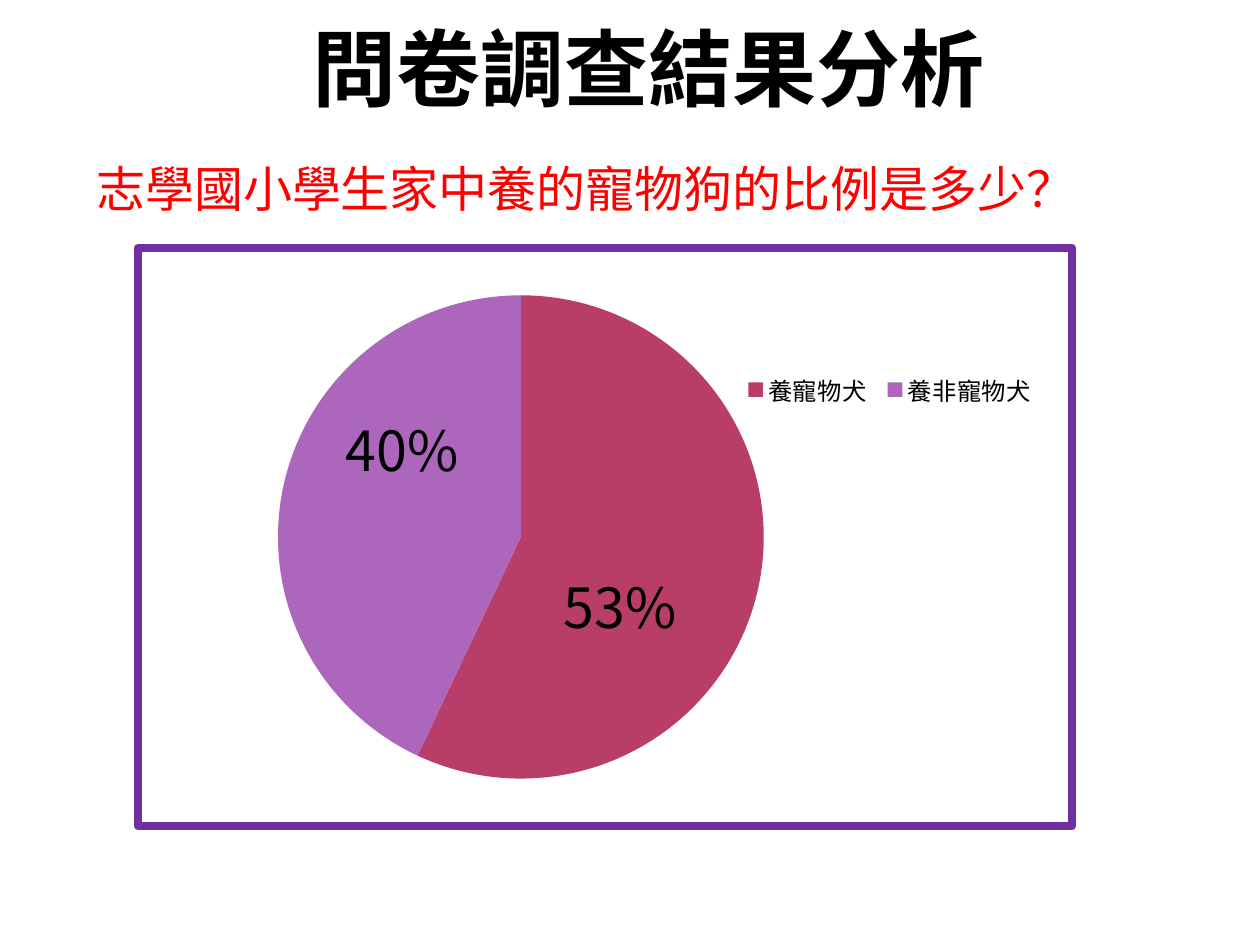
from dataclasses import dataclass

from lxml import etree
from pptx import Presentation
from pptx.chart.data import CategoryChartData
from pptx.dml.color import RGBColor
from pptx.enum.chart import XL_CHART_TYPE, XL_LABEL_POSITION, XL_LEGEND_POSITION
from pptx.enum.text import MSO_ANCHOR, PP_ALIGN
from pptx.oxml import parse_xml
from pptx.oxml.ns import nsdecls, qn
from pptx.util import Emu, Pt

PIE = XL_CHART_TYPE.PIE
CENTER_LABEL = XL_LABEL_POSITION.CENTER
LEGEND_RIGHT = XL_LEGEND_POSITION.RIGHT
TOP, BOTTOM = MSO_ANCHOR.TOP, MSO_ANCHOR.BOTTOM
LEFT, CENTER = PP_ALIGN.LEFT, PP_ALIGN.CENTER
PX_PER_INCH = 126


@dataclass(frozen=True)
class Theme:
    """Colours, fonts and type sizes of the slide."""
    ink: str = "000000"
    question: str = "FF0000"
    frame: str = "7030A0"
    slices: tuple = ("B83D68", "AC66BB")
    text_font: str = "Noto Sans CJK SC"
    chart_font: str = "Noto Sans CJK TC"
    title_size: int = 48
    question_size: int = 28
    chart_size: int = 10
    label_size: int = 32
    legend_size: int = 14
    frame_width: float = 4.5


THEME = Theme()


def px(length):
    """Turn pixels into EMU."""
    return Emu(round(length * 914400 / PX_PER_INCH))


def style_font(font, size, color, face):
    """Set size, colour and typeface of a font."""
    font.size = Pt(size)
    font.color.rgb = RGBColor.from_string(color)
    font.name = face


def add_text(slide, box, text, size, color, bold=False, anchor=TOP, align=LEFT, spacing=1.0):
    """Add a one-paragraph text box."""
    frame = slide.shapes.add_textbox(*map(px, box)).text_frame
    frame.word_wrap = True
    frame.vertical_anchor = anchor
    paragraph = frame.paragraphs[0]
    paragraph.text = text
    paragraph.alignment = align
    paragraph.line_spacing = spacing
    style_font(paragraph.font, size, color, THEME.text_font)
    paragraph.font.bold = bold
    defaults = paragraph._p.get_or_add_pPr().find(qn("a:defRPr"))
    etree.SubElement(defaults, qn("a:ea"), typeface=THEME.text_font)


def manual_layout(inner=False, edge=False, **fractions):
    """Build a chart layout element from fractions of the chart area."""
    layout = parse_xml(f"<c:layout {nsdecls('c')}><c:manualLayout/></c:layout>")
    settings = {"layoutTarget": "inner"} if inner else {}
    if edge:
        settings.update(xMode="edge", yMode="edge")
    settings.update(fractions)
    for tag, value in settings.items():
        etree.SubElement(layout[0], qn(f"c:{tag}"), val=str(value))
    return layout


def frame_chart(chart):
    """Draw the border around the chart area."""
    chart._chartSpace.find(qn("c:chart")).addnext(parse_xml(
        f"<c:spPr {nsdecls('c', 'a')}><a:noFill/>"
        f'<a:ln w="{int(Pt(THEME.frame_width))}"><a:solidFill>'
        f'<a:srgbClr val="{THEME.frame}"/></a:solidFill><a:round/></a:ln></c:spPr>'))


def style_slice(series, index, color, shift):
    """Colour a slice and place its value label."""
    point = series.points[index]
    point.format.fill.solid()
    point.format.fill.fore_color.rgb = RGBColor.from_string(color)
    label = point.data_label
    style_font(label.font, THEME.label_size, THEME.ink, THEME.chart_font)
    label.position = CENTER_LABEL
    label_xml = series._element.find(qn("c:dLbls")).findall(qn("c:dLbl"))[index]
    label_xml.find(qn("c:idx")).addnext(manual_layout(x=shift[0], y=shift[1]))


def add_legend(chart):
    """Add the legend beside the pie."""
    chart.has_legend = True
    legend = chart.legend
    legend.position = LEGEND_RIGHT
    legend.include_in_layout = False
    style_font(legend.font, THEME.legend_size, THEME.ink, THEME.chart_font)
    for old in legend._element.findall(qn("c:layout")):
        legend._element.remove(old)
    legend._element.find(qn("c:legendPos")).addnext(
        manual_layout(edge=True, x=0.64, y=0.21, w=0.33, h=0.07))


def add_pie(slide, box, shares, label_shifts):
    """Add the framed pie chart."""
    data = CategoryChartData(number_format='0"%"')
    data.categories = list(shares)
    data.add_series("Series 1", list(shares.values()))
    chart = slide.shapes.add_chart(PIE, *map(px, box), data).chart
    chart.has_title = False
    style_font(chart.font, THEME.chart_size, THEME.ink, THEME.chart_font)
    frame_chart(chart)
    plot = chart.plots[0]
    plot.vary_by_categories = True
    series = plot.series[0]
    labels = series.data_labels
    labels.show_value = True
    labels.number_format = '0"%"'
    labels.number_format_is_linked = False
    style_font(labels.font, THEME.label_size, THEME.ink, THEME.chart_font)
    for index, (color, shift) in enumerate(zip(THEME.slices, label_shifts)):
        style_slice(series, index, color, shift)
    add_legend(chart)
    plot_area = chart._chartSpace.chart.plotArea
    for old in plot_area.findall(qn("c:layout")):
        plot_area.remove(old)
    plot_area.insert(0, manual_layout(True, True, x=0.15, y=0.08, w=0.52, h=0.84))


def main():
    """Build and save the slide."""
    deck = Presentation()
    deck.slide_width, deck.slide_height = px(1260), px(945)
    slide = deck.slides.add_slide(deck.slide_layouts[6])
    add_text(slide, (164, 0, 969, 125), "問卷調查結果分析", THEME.title_size, THEME.ink,
             bold=True, anchor=BOTTOM, align=CENTER, spacing=0.9)
    add_pie(slide, (134, 244, 942, 586), {"養寵物犬": 53, "養非寵物犬": 40},
            ((-0.02, 0.07), (0, -0.11)))
    add_text(slide, (84, 152, 1142, 72), "志學國小學生家中養的寵物狗的比例是多少？",
             THEME.question_size, THEME.question)
    deck.save("out.pptx")


if __name__ == "__main__":
    main()
